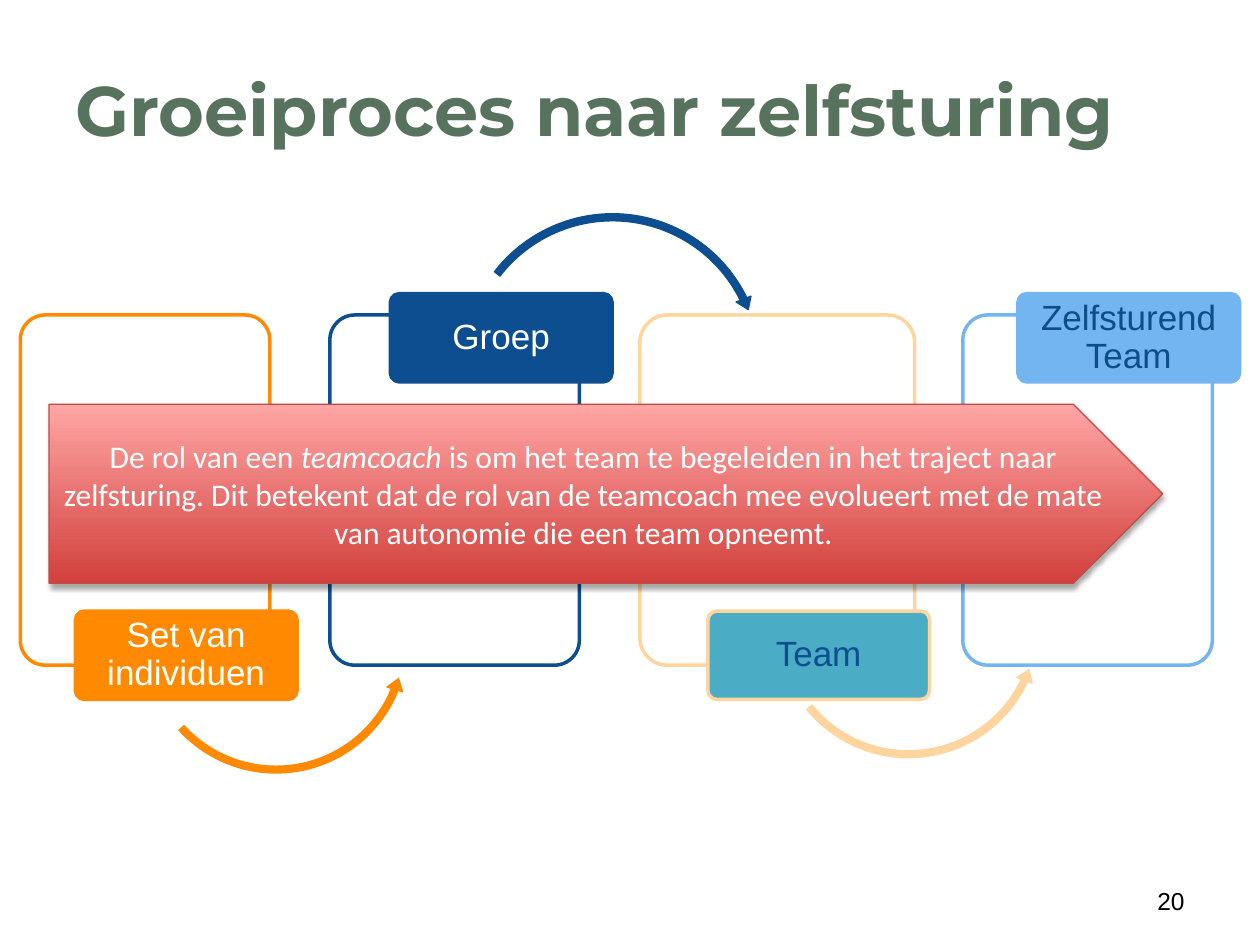
from dataclasses import dataclass
from lxml import etree
from pptx import Presentation, util as u
from pptx.dml.color import RGBColor
from pptx.enum import shapes, text
from pptx.oxml.ns import qn


@dataclass(frozen=True)
class Theme:
    title_font: str = "Montserrat"
    label_font: str = "Arial"
    body_font: str = "Calibri"
    title_size: int = 40
    label_size: int = 20
    body_size: int = 18
    number_size: int = 14
    title: str = "58735D"
    black: str = "000000"
    white: str = "FFFFFF"
    orange: str = "FF8900"
    navy: str = "0D4E91"
    deep_navy: str = "0D4E87"
    peach: str = "FFD49F"
    teal: str = "4BACC6"
    sky: str = "73B5F1"
    role_dark: str = "D1403C"
    role_light: str = "FFA6A5"
    role_edge: str = "BF4C48"


T = Theme()
SHAPE = shapes.MSO_SHAPE
CENTER, RIGHT = text.PP_ALIGN.CENTER, text.PP_ALIGN.RIGHT

TITLE = "Groeiproces naar zelfsturing"
PAGE = "20"
# label, frame left, frame width, badge left, line, badge fill, label colour (cm)
STAGES = [
    ("Set van individuen", 0.41, 5.03, 1.52, T.orange, T.orange, T.white),
    ("Groep", 6.65, 5.03, 7.87, T.navy, T.navy, T.white),
    ("Team", 12.9, 5.54, 14.27, T.peach, T.teal, T.navy),
    ("Zelfsturend Team", 19.41, 5.03, 20.52, T.sky, T.sky, T.deep_navy),
]
# left, top, diameter, rotation: each leads from one stage to the next (cm)
STEPS = [(2.82, 10.19, 5.49, 3.2), (9.25, 4.22, 6.2, -2.9), (15.57, 9.88, 5.49, 6.3)]
BOTTOM_ARC = (SHAPE.LEFT_CIRCULAR_ARROW, (0.025, 3.091, 11.242, 80.641, 0.03))
TOP_ARC = (SHAPE.CIRCULAR_ARROW, (0.023, 2.716, 202.123, 132.349, 0.026))
FRAME_TOP, FRAME_HEIGHT = 6.35, 7.06
BADGE_TOPS = (12.32, 5.92)  # below for odd stages, above for even ones
BADGE_WIDTH, BADGE_HEIGHT = 4.47, 1.78
ROLE = [
    ("De rol van een ", False),
    ("teamcoach", True),
    (" is om het team te begeleiden in het traject naar zelfsturing. Dit betekent dat "
     "de rol van de teamcoach mee evolueert met de mate van autonomie die een team "
     "opneemt.", False),
]


def rgb(colour):
    return RGBColor.from_string(colour)


def write(shape, runs, font, size, colour, align=None, spacing=None, bold=False):
    """Fill a shape with one paragraph made of (words, italic) runs."""
    frame = shape.text_frame
    frame.word_wrap = True
    frame.vertical_anchor = text.MSO_ANCHOR.MIDDLE
    paragraph = frame.paragraphs[0]
    paragraph.alignment, paragraph.line_spacing = align, spacing
    for words, italic in runs:
        run = paragraph.add_run()
        run.text = words
        run.font.name, run.font.size = font, u.Pt(size)
        run.font.bold, run.font.italic = bold, italic
        run.font.color.rgb = rgb(colour)


def add_shape(slide, preset, box, fill, line, width, adjustments=()):
    shape = slide.shapes.add_shape(preset, *map(u.Cm, box))
    shape.shadow.inherit = False
    shape.fill.solid()
    shape.fill.fore_color.rgb = rgb(fill)
    shape.line.color.rgb = rgb(line)
    shape.line.width = u.Pt(width)
    for index, value in enumerate(adjustments):
        shape.adjustments[index] = value
    return shape


def add_text(slide, box, *args, **kwargs):
    write(slide.shapes.add_textbox(*map(u.Cm, box)), *args, **kwargs)


def set_alpha(colour, percent):
    etree.SubElement(colour, qn("a:alpha"), val=str(percent * 1000))


def add_stage(slide, index):
    label, left, width, badge_left, line, fill, ink = STAGES[index]
    frame = add_shape(slide, SHAPE.ROUNDED_RECTANGLE,
                      (left, FRAME_TOP, width, FRAME_HEIGHT), T.white, line, 2, (0.1,))
    set_alpha(frame.fill._xPr.find(qn("a:solidFill"))[0], 90)
    if index < len(STEPS):
        x, y, size, rotation = STEPS[index]
        preset, curve = TOP_ARC if index % 2 else BOTTOM_ARC
        step = add_shape(slide, preset, (x, y, size, size), line, line, 0.75, curve)
        step.rotation = rotation
    badge = add_shape(slide, SHAPE.ROUNDED_RECTANGLE,
                      (badge_left, BADGE_TOPS[index % 2], BADGE_WIDTH, BADGE_HEIGHT),
                      fill, line, 2, (0.1,))
    inset = badge.text_frame
    inset.margin_left = inset.margin_right = u.Cm(0.1)
    inset.margin_top = inset.margin_bottom = u.Cm(0.08)
    write(badge, [(label, False)], T.label_font, T.label_size, ink, CENTER, 0.9)


def add_role(slide):
    role = add_shape(slide, SHAPE.PENTAGON, (0.99, 8.15, 22.45, 3.61),
                     T.role_dark, T.role_edge, 0.75)
    role.fill.gradient()
    role.fill.gradient_angle = 90
    for stop, colour in zip(role.fill.gradient_stops, (T.role_dark, T.role_light)):
        stop.color.rgb = rgb(colour)
    effects = role._element.spPr.find(qn("a:effectLst"))
    shadow = etree.SubElement(effects, qn("a:outerShdw"), blurRad=str(u.Pt(3.1)),
                              dist=str(u.Pt(1.8)), dir="5400000", rotWithShape="0")
    set_alpha(etree.SubElement(shadow, qn("a:srgbClr"), val=T.black), 35)
    write(role, ROLE, T.body_font, T.body_size, T.white, CENTER)


def main():
    deck = Presentation()
    deck.slide_width, deck.slide_height = u.Cm(25.4), u.Cm(19.05)
    slide = deck.slides.add_slide(deck.slide_layouts[6])
    add_text(slide, (1.27, 0.76, 22.86, 3.18), [(TITLE, False)], T.title_font,
             T.title_size, T.title, spacing=0.8, bold=True)
    add_text(slide, (18.21, 17.65, 5.92, 1.02), [(PAGE, False)], T.label_font,
             T.number_size, T.black, RIGHT)
    for index in range(len(STAGES)):
        add_stage(slide, index)
    add_role(slide)
    deck.save("out.pptx")


if __name__ == "__main__":
    main()
